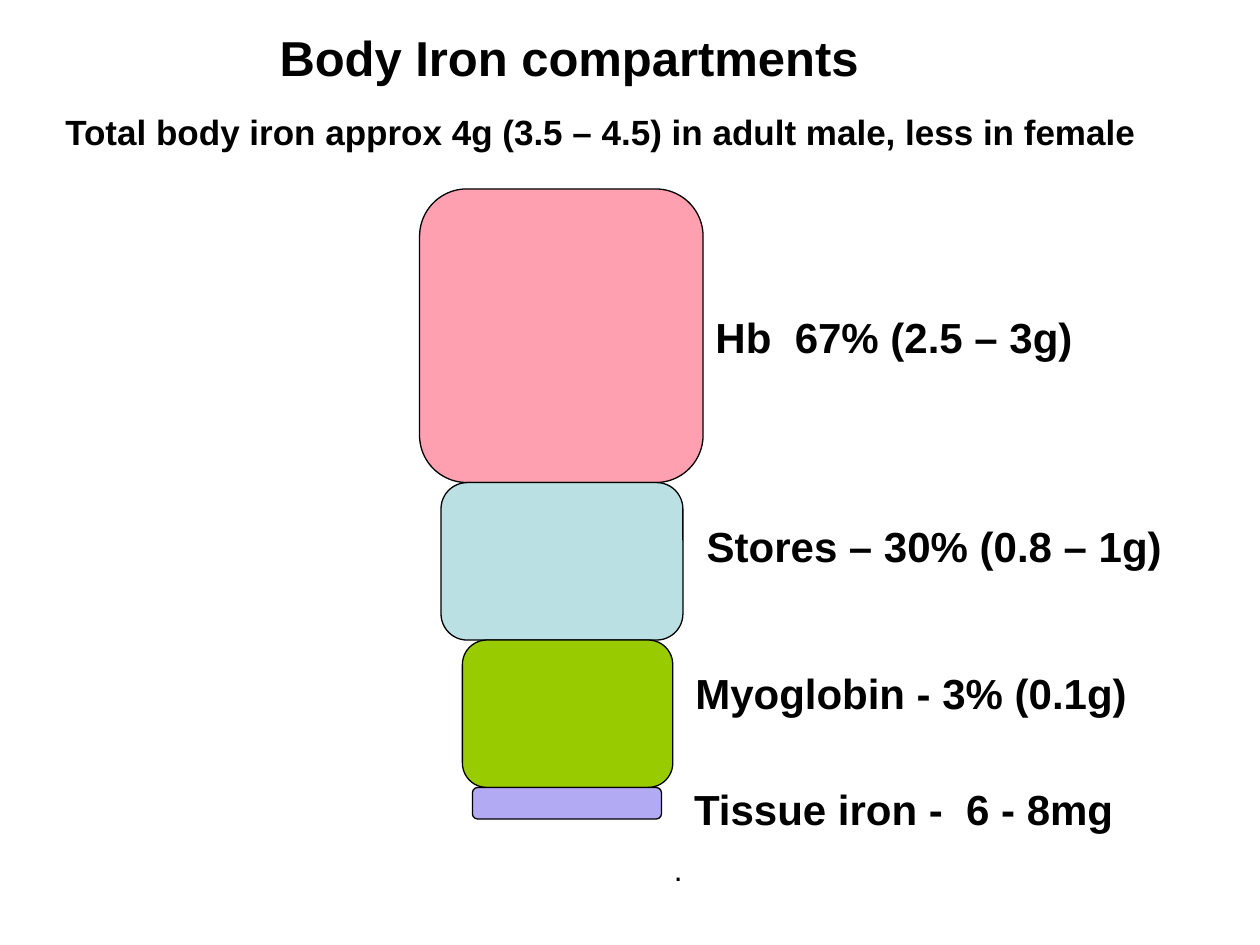
from dataclasses import dataclass

from pptx import Presentation
from pptx.dml.color import RGBColor
from pptx.enum.shapes import MSO_SHAPE
from pptx.util import Inches, Pt

ROUNDED = MSO_SHAPE.ROUNDED_RECTANGLE
FONT = "Arial"
COLORS = {
    "ink": "000000",
    "haemoglobin": "FEA0B0",
    "stores": "BBE0E3",
    "myoglobin": "99CC00",
    "tissue": "B3AAF4",
}
STACK_TOP = 1.5


@dataclass
class Compartment:
    color: str
    left: float
    width: float
    height: float


@dataclass
class Caption:
    text: str
    left: float
    top: float
    width: float
    height: float
    size: int = 24
    indent: float = 0


COMPARTMENTS = [
    Compartment("haemoglobin", 3.33, 2.25, 2.33),
    Compartment("stores", 3.5, 1.92, 1.25),
    Compartment("myoglobin", 3.67, 1.67, 1.17),
    Compartment("tissue", 3.75, 1.5, 0.25),
]
CAPTIONS = [
    Caption("Body Iron compartments", 0.92, 0.17, 8.25, 0.6, 28, 1.2),
    Caption("Total body iron approx 4g (3.5 – 4.5) in adult male, less in female",
            0.42, 0.83, 8.83, 0.5, 20),
    Caption("Hb  67% (2.5 – 3g)", 5.58, 2.42, 3.25, 0.5),
    Caption("Stores – 30% (0.8 – 1g)", 5.42, 4.08, 4.08, 0.5, indent=0.09),
    Caption("Myoglobin - 3% (0.1g)", 5.33, 5.25, 4, 0.5, indent=0.09),
]
TISSUE = Caption("Tissue iron -  6 - 8mg", 5.25, 6.17, 3.92, 0.96, indent=0.16)


def style_paragraph(paragraph, text: str, size: int, bold: bool, before: float) -> None:
    paragraph.text = text
    paragraph.space_before = Pt(before)
    font = paragraph.font
    font.name, font.size, font.bold = FONT, Pt(size), bold
    font.color.rgb = RGBColor.from_string(COLORS["ink"])


def draw_compartment(slide, part: Compartment, top: float) -> None:
    block = slide.shapes.add_shape(ROUNDED, Inches(part.left), Inches(top),
                                   Inches(part.width), Inches(part.height))
    block.shadow.inherit = False
    block.fill.solid()
    block.fill.fore_color.rgb = RGBColor.from_string(COLORS[part.color])
    block.line.color.rgb = RGBColor.from_string(COLORS["ink"])
    block.line.width = Pt(0.75)


def draw_caption(slide, caption: Caption):
    box = slide.shapes.add_textbox(Inches(caption.left), Inches(caption.top),
                                   Inches(caption.width), Inches(caption.height))
    frame = box.text_frame
    frame.word_wrap = True
    paragraph = frame.paragraphs[0]
    style_paragraph(paragraph, caption.text, caption.size, True, 2)
    paragraph._p.get_or_add_pPr().set("marL", str(Inches(caption.indent)))
    return frame


def main() -> None:
    presentation = Presentation()
    presentation.slide_width, presentation.slide_height = Inches(10), Inches(7.5)
    slide = presentation.slides.add_slide(presentation.slide_layouts[6])

    # Stacked compartments, each resting on the next
    top = STACK_TOP
    for part in COMPARTMENTS:
        draw_compartment(slide, part, top)
        top += part.height

    # Headings and labels
    for caption in CAPTIONS:
        draw_caption(slide, caption)

    # Tissue label with its closing dot
    tissue_frame = draw_caption(slide, TISSUE)
    style_paragraph(tissue_frame.add_paragraph(), ".", 18, False, 9)

    presentation.save("out.pptx")


if __name__ == "__main__":
    main()
